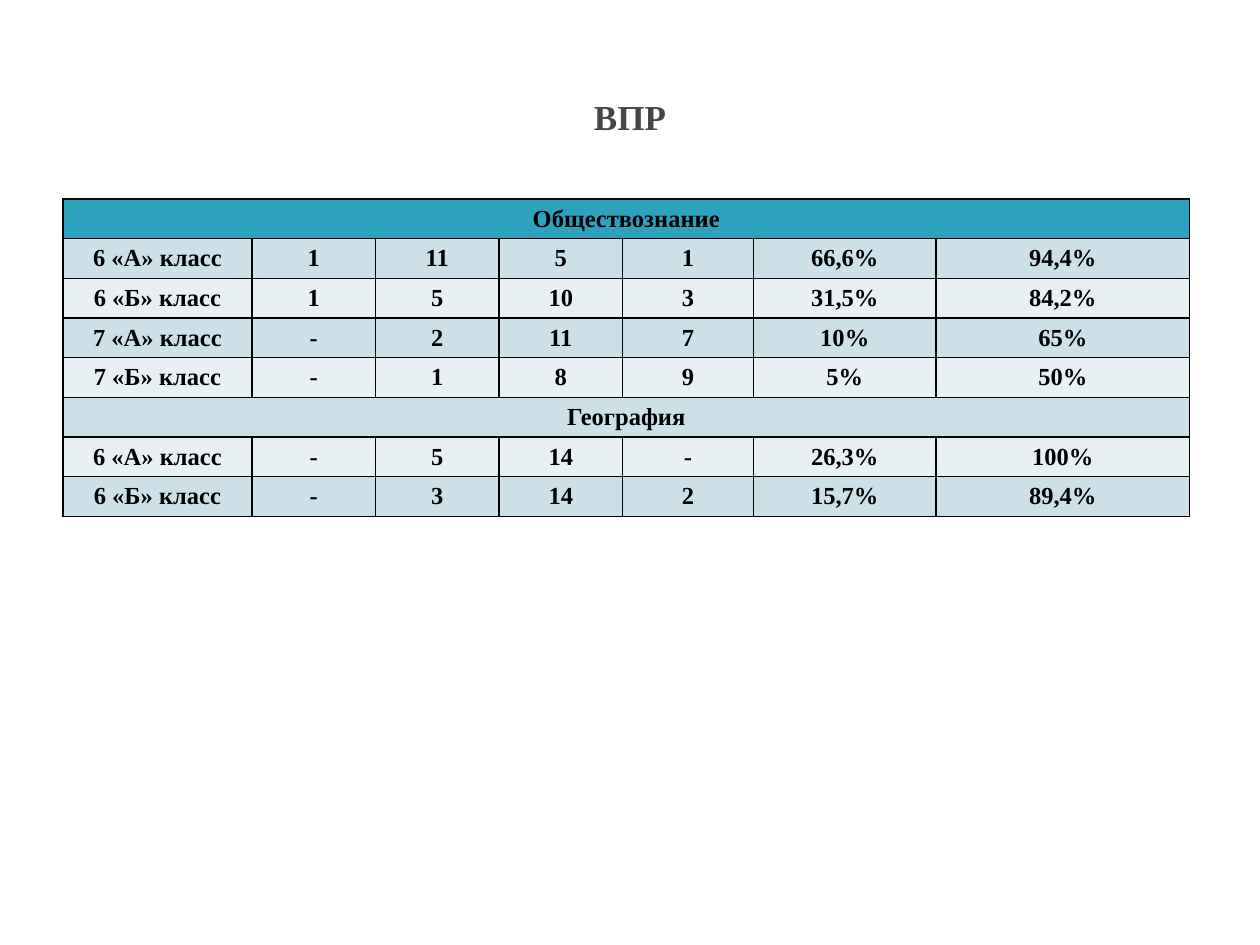
from lxml import etree
from pptx import Presentation
from pptx.dml.color import RGBColor
from pptx.enum import text
from pptx.oxml import ns
from pptx.util import Cm, Pt

FONT = "Times New Roman"
COLORS = {
    "title": "464646",
    "text": "000000",
    "border": "000000",
    "header": "2DA2BF",
    "odd": "CDE0E8",
    "even": "E8F0F4",
}
COLUMN_WIDTHS = [3.81, 2.49, 2.49, 2.49, 2.64, 3.68, 5.11]
ROW_HEIGHT = 0.8
RESULTS = [
    ["Обществознание"],
    ["6 «А» класс", "1", "11", "5", "1", "66,6%", "94,4%"],
    ["6 «Б» класс", "1", "5", "10", "3", "31,5%", "84,2%"],
    ["7 «А» класс", "-", "2", "11", "7", "10%", "65%"],
    ["7 «Б» класс", "-", "1", "8", "9", "5%", "50%"],
    ["География"],
    ["6 «А» класс", "-", "5", "14", "-", "26,3%", "100%"],
    ["6 «Б» класс", "-", "3", "14", "2", "15,7%", "89,4%"],
]


def style_paragraph(p, size, color):
    p.alignment = text.PP_ALIGN.CENTER
    p.font.name = FONT
    p.font.size = Pt(size)
    p.font.bold = True
    p.font.color.rgb = RGBColor.from_string(COLORS[color])


def add_title(s, title):
    tf = s.shapes.add_textbox(Cm(1.27), Cm(0.76), Cm(22.86), Cm(3.18)).text_frame
    tf.word_wrap = True
    tf.vertical_anchor = text.MSO_ANCHOR.MIDDLE
    tf.text = title
    style_paragraph(tf.paragraphs[0], 20, "title")


def add_borders(cell):
    """Draw a 1 pt line on all four sides; the lines must precede the fill."""
    tc_pr = cell._tc.get_or_add_tcPr()
    for i, side in enumerate("LRTB"):
        ln = etree.Element(ns.qn(f"a:ln{side}"), w=str(Pt(1)))
        fill = etree.SubElement(ln, ns.qn("a:solidFill"))
        etree.SubElement(fill, ns.qn("a:srgbClr"), val=COLORS["border"])
        tc_pr.insert(i, ln)


def style_cell(cell, fill):
    cell.fill.solid()
    cell.fill.fore_color.rgb = RGBColor.from_string(COLORS[fill])
    cell.vertical_anchor = text.MSO_ANCHOR.MIDDLE
    cell.margin_top = cell.margin_bottom = 0
    add_borders(cell)
    style_paragraph(cell.text_frame.paragraphs[0], 14, "text")


def add_results_table(s, rows):
    """Add the table; a row with a single value spans all columns."""
    n_cols = len(COLUMN_WIDTHS)
    table = s.shapes.add_table(
        len(rows), n_cols, Cm(1.27), Cm(4.01),
        Cm(sum(COLUMN_WIDTHS)), Cm(ROW_HEIGHT * len(rows)),
    ).table
    for column, width in zip(table.columns, COLUMN_WIDTHS):
        column.width = Cm(width)
    for i, values in enumerate(rows):
        table.rows[i].height = Cm(ROW_HEIGHT)
        fill = "header" if i == 0 else "odd" if i % 2 else "even"
        for j, value in enumerate(values):
            table.cell(i, j).text = value
        for cell in table.rows[i].cells:
            style_cell(cell, fill)
        if len(values) == 1:
            table.cell(i, 0).merge(table.cell(i, n_cols - 1))


def main():
    prs = Presentation()
    prs.slide_width, prs.slide_height = Cm(25.4), Cm(19.05)
    s = prs.slides.add_slide(prs.slide_layouts[6])
    add_title(s, "ВПР")
    add_results_table(s, RESULTS)
    prs.save("out.pptx")


if __name__ == "__main__":
    main()
